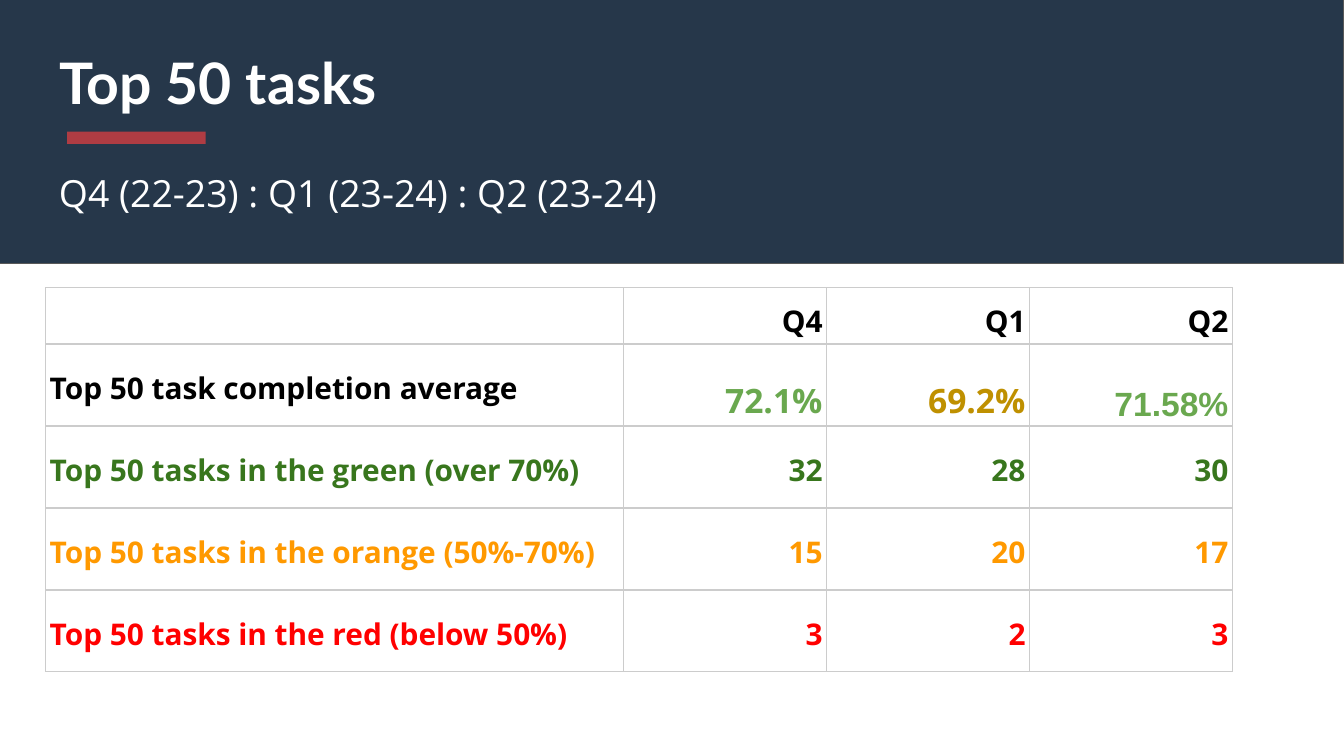
from dataclasses import dataclass

from lxml import etree
from pptx import Presentation
from pptx.dml.color import RGBColor
from pptx.enum.shapes import MSO_SHAPE
from pptx.enum.text import MSO_ANCHOR as Anchor, PP_ALIGN as Align
from pptx.oxml.ns import qn
from pptx.util import Inches, Pt


@dataclass(frozen=True)
class Theme:
    navy: str = "26374A"
    outline: str = "595959"
    accent: str = "AF3C43"
    white: str = "FFFFFF"
    black: str = "000000"
    grid: str = "CCCCCC"
    light_green: str = "6AA84F"
    gold: str = "BF9000"
    green: str = "38761D"
    orange: str = "FF9900"
    red: str = "FF0000"
    heading_font: str = "Lato"
    body_font: str = "Open Sans"
    plain_font: str = "Arial"
    title_size: float = 30.6
    subtitle_size: float = 20
    average_size: float = 18
    cell_size: float = 16
    line_width: float = 0.75


@dataclass(frozen=True)
class Entry:
    text: str
    color: str
    size: float
    font: str
    anchor: Anchor = Anchor.MIDDLE


class SlideBuilder:
    def __init__(self, page, theme):
        self.page = page
        self.theme = theme

    def style_text(self, para, font, size, color, bold=False):
        for span in para.runs:
            span.font.name = font
            span.font.size = Pt(size)
            span.font.bold = bold
            span.font.color.rgb = RGBColor.from_string(color)

    def fill_frame(self, box, text, font, size, color, bold=False):
        frame = box.text_frame
        frame.word_wrap = True
        frame.vertical_anchor = Anchor.TOP
        frame.margin_left = frame.margin_right = Inches(0.1)
        frame.margin_top = frame.margin_bottom = Inches(0.1)
        frame.text = text
        para = frame.paragraphs[0]
        para.alignment = Align.LEFT
        para.line_spacing = 1.0
        para.space_before = Pt(0)
        self.style_text(para, font, size, color, bold)

    def title(self, text, left, top, width, height):
        box = self.page.shapes.title
        box.left, box.top = Inches(left), Inches(top)
        box.width, box.height = Inches(width), Inches(height)
        self.fill_frame(box, text, self.theme.heading_font,
                        self.theme.title_size, self.theme.white, True)

    def subtitle(self, text, left, top, width, height):
        box = self.page.shapes.add_textbox(
            Inches(left), Inches(top), Inches(width), Inches(height))
        self.fill_frame(box, text, self.theme.body_font,
                        self.theme.subtitle_size, self.theme.white)

    def rectangle(self, left, top, width, height, color, outline=None):
        box = self.page.shapes.add_shape(
            MSO_SHAPE.RECTANGLE, Inches(left), Inches(top),
            Inches(width), Inches(height))
        box.shadow.inherit = False
        box.fill.solid()
        box.fill.fore_color.rgb = RGBColor.from_string(color)
        if outline:
            box.line.color.rgb = RGBColor.from_string(outline)
            box.line.width = Pt(self.theme.line_width)
        else:
            box.line.fill.background()
        return box

    def backdrop(self, *placement):
        box = self.rectangle(*placement, self.theme.navy, self.theme.outline)
        self.page.shapes._spTree.insert(2, box._element)

    def border_cell(self, cell):
        properties = cell._tc.get_or_add_tcPr()
        for index, side in enumerate(("lnL", "lnR", "lnT", "lnB")):
            line = etree.Element(qn(f"a:{side}"), w=str(Pt(self.theme.line_width)))
            fill = etree.SubElement(line, qn("a:solidFill"))
            etree.SubElement(fill, qn("a:srgbClr"), val=self.theme.grid)
            properties.insert(index, line)

    def format_cell(self, cell, entry, align):
        cell.fill.background()
        cell.margin_left = cell.margin_right = Inches(0.03)
        cell.margin_top = cell.margin_bottom = Inches(0.02)
        cell.vertical_anchor = entry.anchor
        cell.text_frame.text = entry.text
        para = cell.text_frame.paragraphs[0]
        para.alignment = align
        para.line_spacing = 1.15
        self.style_text(para, entry.font, entry.size, entry.color, True)
        self.border_cell(cell)

    def table(self, left, top, widths, heights, rows):
        grid = self.page.shapes.add_table(
            len(heights), len(widths), Inches(left), Inches(top),
            Inches(sum(widths)), Inches(sum(heights))).table
        grid.first_row = grid.horz_banding = False
        for column, width in zip(grid.columns, widths):
            column.width = Inches(width)
        for row, height, entries in zip(grid.rows, heights, rows):
            row.height = Inches(height)
            for index, (cell, entry) in enumerate(zip(row.cells, entries)):
                self.format_cell(cell, entry, Align.RIGHT if index else Align.LEFT)


def task_rows(theme):
    def regular(text, color, anchor=Anchor.MIDDLE):
        return Entry(text, color, theme.cell_size, theme.body_font, anchor)

    def average(text, color, font=theme.body_font):
        return Entry(text, color, theme.average_size, font, Anchor.BOTTOM)

    header = [regular(text, theme.black, Anchor.BOTTOM)
              for text in ("", "Q4", "Q1", "Q2")]
    averages = [
        regular("Top 50 task completion average", theme.black),
        average("72.1%", theme.light_green),
        average("69.2%", theme.gold),
        average("71.58%", theme.light_green, theme.plain_font),
    ]
    counts = [
        (theme.green, "Top 50 tasks in the green (over 70%)", "32", "28", "30"),
        (theme.orange, "Top 50 tasks in the orange (50%-70%)", "15", "20", "17"),
        (theme.red, "Top 50 tasks in the red (below 50%)", "3", "2", "3"),
    ]
    return [header, averages] + [
        [regular(text, color) for text in texts] for color, *texts in counts]


def main():
    theme = Theme()
    deck = Presentation()
    deck.slide_width = Inches(10)
    deck.slide_height = deck.slide_width * 9 // 16
    page = deck.slides.add_slide(deck.slide_layouts[5])
    builder = SlideBuilder(page, theme)
    builder.backdrop(-0.05, -0.01, 10.05, 1.97)
    builder.title("Top 50 tasks", 0.34, 0.25, 7.67, 1.05)
    builder.rectangle(0.5, 0.98, 1.03, 0.09, theme.accent)
    builder.subtitle("Q4 (22-23) : Q1 (23-24) : Q2 (23-24)", 0.34, 1.17, 7.71, 0.5)
    builder.table(0.34, 2.14, [4.3] + [1.51] * 3, [0.42] + [0.61] * 4,
                  task_rows(theme))
    deck.save("out.pptx")


if __name__ == "__main__":
    main()
